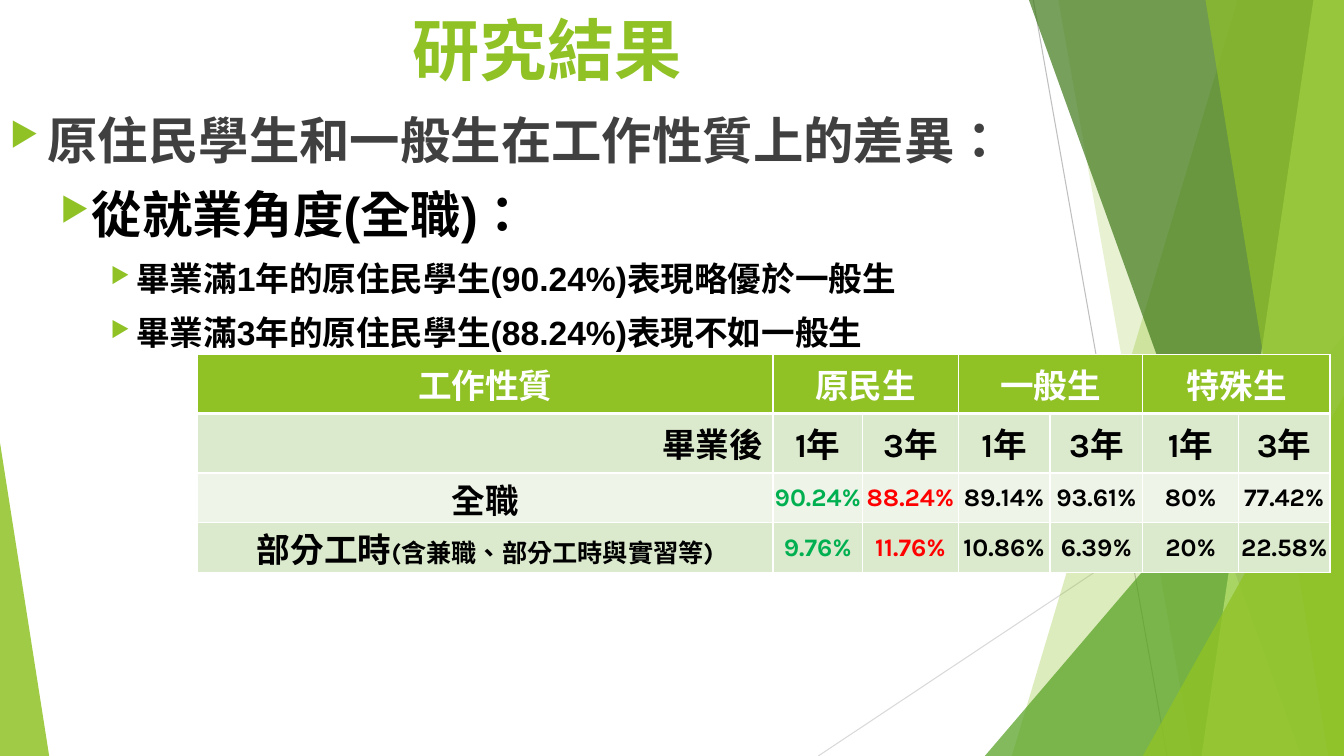
from dataclasses import dataclass

from lxml.etree import SubElement
from pptx import Presentation
from pptx.dml.color import RGBColor
from pptx.enum.shapes import MSO_CONNECTOR, MSO_SHAPE
from pptx.enum.text import MSO_ANCHOR, MSO_AUTO_SIZE, PP_ALIGN
from pptx.oxml.ns import qn
from pptx.util import Cm, Pt

WIDTH, HEIGHT = 33.87, 19.05
CJK_FONT = "Noto Sans CJK SC"
COLORS = {
    "lime": "90C226", "green": "54A021", "forest": "3F7819", "pale": "C0E474",
    "line": "BFBFBF", "light_line": "D9D9D9", "gray": "404040",
    "black": "000000", "white": "FFFFFF", "good": "00B050", "bad": "FF0000",
    "band": "DBE9CD", "light_band": "EEF4E8",
}


@dataclass
class Ray:
    start: tuple[float, float]
    end: tuple[float, float]
    color: str


@dataclass
class Panel:
    """A band from a slanted left edge to the right side of the slide."""
    top_x: float
    bottom_x: float
    color: str
    opacity: int


@dataclass
class Triangle:
    left: float
    top: float
    width: float
    apex: float
    color: str
    opacity: int


@dataclass
class Bullet:
    text: str
    level: int
    indent: float
    hanging: float
    size: int
    color: str = "black"


DECORATIONS = [
    Ray((26.04, 0), (29.41, HEIGHT), "line"),
    Ray((WIDTH, 10.24), (20.62, HEIGHT), "light_line"),
    Panel(31.19, 25.5, "lime", 30),
    Panel(26.67, 30.05, "lime", 20),
    Triangle(24.82, 8.46, 9.05, 1, "green", 72),
    Panel(25.93, 32.79, "forest", 70),
    Panel(33.1, 30.28, "pale", 70),
    Panel(30.38, 33.48, "lime", 65),
    Triangle(28.8, 9.98, 5.07, 1, "lime", 80),
    Triangle(0, 11.15, 1.24, 0, "lime", 85),
]
BULLETS = [
    Bullet("原住民學生和一般生在工作性質上的差異：", 0, 0.95, 0.95, 36, "gray"),
    Bullet("從就業角度(全職)：", 1, 2.06, 0.79, 36),
    Bullet("畢業滿1年的原住民學生(90.24%)表現略優於一般生", 2, 3.18, 0.64, 24),
    Bullet("畢業滿3年的原住民學生(88.24%)表現不如一般生", 2, 3.18, 0.64, 24),
]
COLUMN_WIDTHS = [14.5, 2.26, 2.41, 2.31, 2.34, 2.41, 2.31]
ROW_HEIGHTS = [1.48, 1.5, 1.25, 1.25]
GROUPS = ["原民生", "一般生", "特殊生"]
ROWS = [
    ["工作性質"] + [label for group in GROUPS for label in (group, "")],
    ["畢業後"] + ["1年", "3年"] * len(GROUPS),
    ["全職", "90.24%", "88.24%", "89.14%", "93.61%", "80%", "77.42%"],
    ["部分工時", "9.76%", "11.76%", "10.86%", "6.39%", "20%", "22.58%"],
]
ROW_FILLS = ["lime", "band", "light_band", "band"]
VALUE_COLORS = {1: "good", 2: "bad"}


def rgb(name: str) -> RGBColor:
    return RGBColor.from_string(COLORS[name])


def add_text(paragraph, text: str, *, size: int, color: str, font: str) -> None:
    run = paragraph.add_run()
    run.text = text
    run.font.size, run.font.bold, run.font.name = Pt(size), True, font
    run.font.color.rgb = rgb(color)
    properties = run.font._element
    properties.set("lang", "zh-TW")
    SubElement(properties, qn("a:ea")).set("typeface", CJK_FONT)


def fill_shape(shape, color: str, opacity: int) -> None:
    shape.shadow.inherit = False
    shape.line.fill.background()
    shape.fill.solid()
    shape.fill.fore_color.rgb = rgb(color)
    color_element = shape._element.spPr.find(qn("a:solidFill"))[0]
    SubElement(color_element, qn("a:alpha")).set("val", str(opacity * 1000))


def add_ray(slide, ray: Ray) -> None:
    points = [Cm(value) for value in ray.start + ray.end]
    connector = slide.shapes.add_connector(MSO_CONNECTOR.STRAIGHT, *points)
    connector.line.width = Pt(0.75)
    connector.line.color.rgb = rgb(ray.color)
    SubElement(connector._element.spPr, qn("a:effectLst"))


def add_panel(slide, panel: Panel) -> None:
    builder = slide.shapes.build_freeform(Cm(panel.top_x), 0)
    corners = [(WIDTH, 0), (WIDTH, HEIGHT), (panel.bottom_x, HEIGHT)]
    builder.add_line_segments([(Cm(x), Cm(y)) for x, y in corners], close=True)
    fill_shape(builder.convert_to_shape(), panel.color, panel.opacity)


def add_triangle(slide, triangle: Triangle) -> None:
    shape = slide.shapes.add_shape(
        MSO_SHAPE.ISOSCELES_TRIANGLE, Cm(triangle.left), Cm(triangle.top),
        Cm(triangle.width), Cm(HEIGHT - triangle.top))
    shape.adjustments[0] = triangle.apex
    fill_shape(shape, triangle.color, triangle.opacity)


def format_title(slide) -> None:
    title = slide.shapes.title
    slide.shapes._spTree.append(title._element)
    title.left, title.top, title.width, title.height = Cm(1.85), Cm(0.08), Cm(23.88), Cm(2.3)
    frame = title.text_frame
    frame.auto_size, frame.vertical_anchor = MSO_AUTO_SIZE.NONE, MSO_ANCHOR.MIDDLE
    paragraph = frame.paragraphs[0]
    paragraph.alignment = PP_ALIGN.CENTER
    add_text(paragraph, "研究結果", size=48, color="lime", font=CJK_FONT)


def add_bullets(slide) -> None:
    frame = slide.shapes.add_textbox(0, Cm(2.62), Cm(32.03), Cm(15.85)).text_frame
    frame.word_wrap = True
    for index, bullet in enumerate(BULLETS):
        paragraph = frame.add_paragraph() if index else frame.paragraphs[0]
        paragraph.level = bullet.level
        paragraph.space_before = Pt(10)
        properties = paragraph._p.get_or_add_pPr()
        properties.set("marL", str(Cm(bullet.indent)))
        properties.set("indent", str(-Cm(bullet.hanging)))
        bullet_color = SubElement(properties, qn("a:buClr"))
        SubElement(bullet_color, qn("a:srgbClr")).set("val", COLORS["lime"])
        SubElement(properties, qn("a:buSzPct")).set("val", "65000")
        SubElement(properties, qn("a:buChar")).set("char", "▶")
        add_text(paragraph, bullet.text, size=bullet.size, color=bullet.color, font="Arial")


def style_cell(cell, fill: str, bottom_width: int) -> None:
    properties = cell._tc.get_or_add_tcPr()
    for side, width in {"L": 1, "R": 1, "T": 1, "B": bottom_width}.items():
        border = SubElement(properties, qn(f"a:ln{side}"), w=str(Pt(width)))
        border_fill = SubElement(border, qn("a:solidFill"))
        SubElement(border_fill, qn("a:srgbClr")).set("val", COLORS["white"])
    cell.fill.solid()
    cell.fill.fore_color.rgb = rgb(fill)
    cell.vertical_anchor = MSO_ANCHOR.MIDDLE


def add_job_table(slide) -> None:
    table = slide.shapes.add_table(
        len(ROWS), len(COLUMN_WIDTHS), Cm(4.98), Cm(8.94),
        Cm(sum(COLUMN_WIDTHS)), Cm(sum(ROW_HEIGHTS))).table
    for column, width in zip(table.columns, COLUMN_WIDTHS):
        column.width = Cm(width)
    for row, height in zip(table.rows, ROW_HEIGHTS):
        row.height = Cm(height)
    for row_index, texts in enumerate(ROWS):
        is_header, is_data = row_index == 0, row_index >= 2
        for column_index, text in enumerate(texts):
            cell = table.cell(row_index, column_index)
            style_cell(cell, ROW_FILLS[row_index], 3 if is_header else 1)
            if is_data:
                cell.margin_left = cell.margin_right = cell.margin_top = Cm(0.03)
                cell.margin_bottom = 0
            if not text:
                cell_before = table.cell(row_index, column_index - 1)
                cell_before.merge(cell)
                continue
            is_value = is_data and column_index > 0
            color = VALUE_COLORS.get(column_index, "black") if is_value else "black"
            paragraph = cell.text_frame.paragraphs[0]
            paragraph.alignment = PP_ALIGN.RIGHT if text == "畢業後" else PP_ALIGN.CENTER
            add_text(paragraph, text, size=18 if is_value else 24,
                     color="white" if is_header else color, font="Karla")
    part_time = table.cell(3, 0).text_frame.paragraphs[0]
    add_text(part_time, "(含兼職、部分工時與實習等)", size=18, color="black", font="Karla")


def main() -> None:
    presentation = Presentation()
    presentation.slide_width, presentation.slide_height = Cm(WIDTH), Cm(HEIGHT)
    slide = presentation.slides.add_slide(presentation.slide_layouts[5])
    painters = {Ray: add_ray, Panel: add_panel, Triangle: add_triangle}
    for decoration in DECORATIONS:
        painters[type(decoration)](slide, decoration)
    format_title(slide)
    add_bullets(slide)
    add_job_table(slide)
    presentation.save("out.pptx")


if __name__ == "__main__":
    main()
